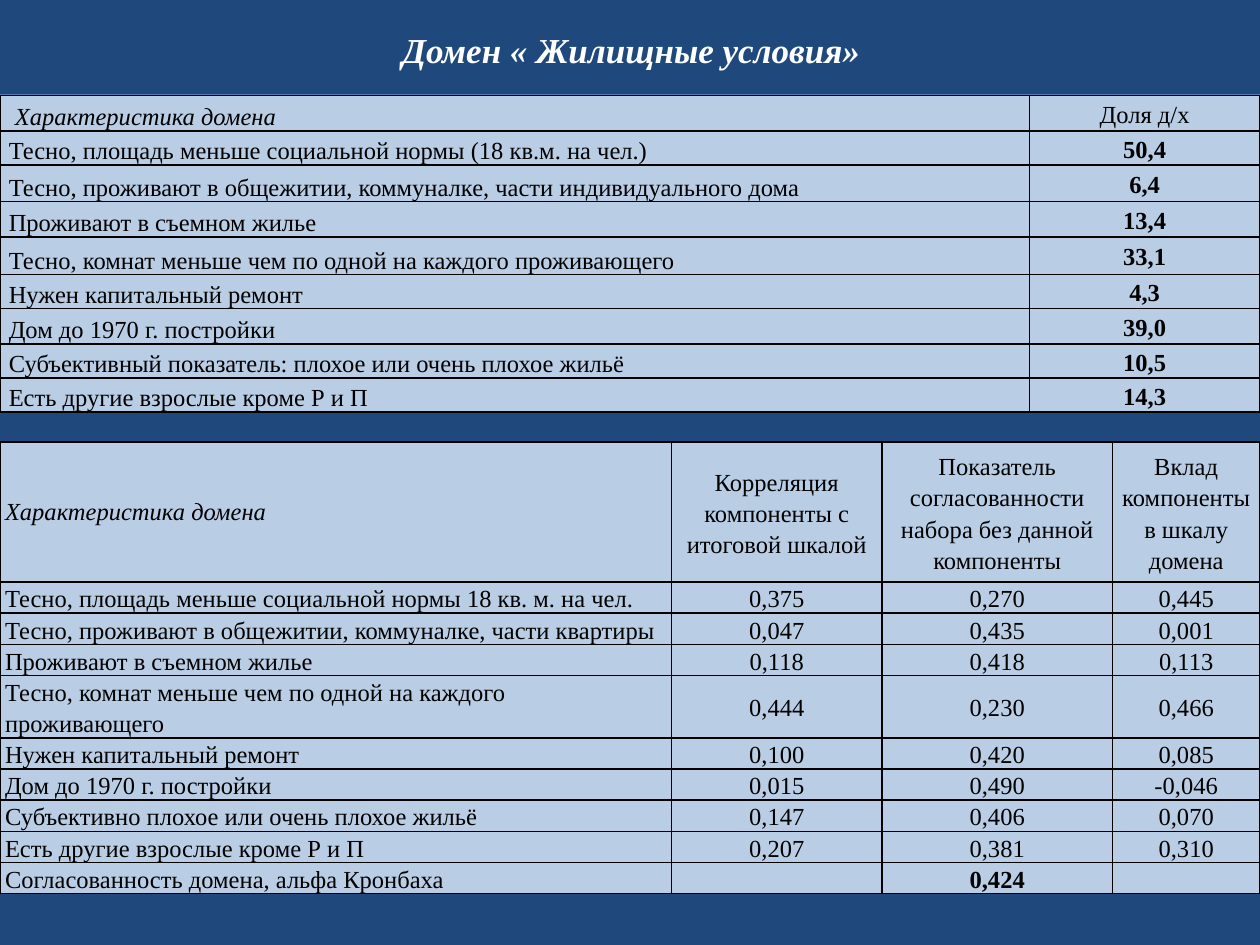
from lxml.etree import SubElement, fromstring
from pptx import Presentation
from pptx.dml.color import RGBColor
from pptx.enum.shapes import MSO_CONNECTOR
from pptx.enum.text import MSO_ANCHOR, PP_ALIGN
from pptx.oxml.ns import nsdecls, qn
from pptx.util import Inches, Pt

COLORS = {"back": "1F497D", "title": "FFFFFF", "rule": "4B7EBC",
          "cell": "B9CDE5", "text": "000000", "border": "000000"}

SHARES = [
    ("\u00a0Характеристика домена".replace("\u00a0", " "), "Доля д/х"),
    ("Тесно, площадь меньше социальной нормы (18 кв.м. на чел.)", "50,4"),
    ("Тесно, проживают в общежитии, коммуналке, части индивидуального дома", "6,4"),
    ("Проживают в съемном жилье", "13,4"),
    ("Тесно, комнат меньше чем по одной на каждого проживающего", "33,1"),
    ("Нужен капитальный ремонт", "4,3"),
    ("Дом до 1970 г. постройки", "39,0"),
    ("Субъективный показатель: плохое или очень плохое жильё", "10,5"),
    ("Есть другие взрослые кроме Р и П", "14,3"),
]
SCALE = [
    ("Характеристика домена", "Корреляция компоненты с итоговой шкалой",
     "Показатель согласованности набора без данной компоненты",
     "Вклад компоненты в шкалу домена"),
    ("Тесно, площадь меньше социальной нормы 18 кв. м. на чел.", "0,375", "0,270", "0,445"),
    ("Тесно, проживают в общежитии, коммуналке, части квартиры", "0,047", "0,435", "0,001"),
    ("Проживают в съемном жилье", "0,118", "0,418", "0,113"),
    ("Тесно, комнат меньше чем по одной на каждого проживающего", "0,444", "0,230", "0,466"),
    ("Нужен капитальный ремонт", "0,100", "0,420", "0,085"),
    ("Дом до 1970 г. постройки", "0,015", "0,490", "-0,046"),
    ("Субъективно плохое или очень плохое жильё", "0,147", "0,406", "0,070"),
    ("Есть другие взрослые кроме Р и П", "0,207", "0,381", "0,310"),
    ("Согласованность домена, альфа Кронбаха", "", "0,424", ""),
]


class DomainSlide:
    """Slide builder on a grid of 100 columns by 75 rows."""

    font = "Times New Roman"
    text_size = 14

    def __init__(self, deck):
        self.col = deck.slide_width / 100
        self.row = deck.slide_height / 75
        self.slide = deck.slides.add_slide(deck.slide_layouts[5])
        self.paint(self.slide.background.fill, "back")

    def paint(self, fill, color):
        fill.solid()
        fill.fore_color.rgb = RGBColor.from_string(COLORS[color])

    def box(self, left, top, width, height):
        return (round(left * self.col), round(top * self.row),
                round(width * self.col), round(height * self.row))

    def format_runs(self, paragraph, size, color, bold=False, italic=False):
        for run in paragraph.runs:
            font = run.font
            font.name, font.size = self.font, Pt(size)
            font.bold, font.italic = bold, italic
            font.color.rgb = RGBColor.from_string(COLORS[color])

    def title(self, text, *place):
        heading = self.slide.shapes.title
        heading.left, heading.top, heading.width, heading.height = self.box(*place)
        heading.text_frame.text = text
        heading.text_frame.vertical_anchor = MSO_ANCHOR.MIDDLE
        paragraph = heading.text_frame.paragraphs[0]
        paragraph.alignment = PP_ALIGN.CENTER
        self.format_runs(paragraph, 20, "title", bold=True, italic=True)

    def rule(self, top):
        left, y, width, _ = self.box(0, top, 100, 0)
        divider = self.slide.shapes.add_connector(
            MSO_CONNECTOR.STRAIGHT, left, y, left + width, y)
        divider.line.color.rgb = RGBColor.from_string(COLORS["rule"])
        divider.line.width = Pt(2.5)
        SubElement(divider._element.spPr, qn("a:effectLst"))

    def cell(self, cell, text, anchor, align, inset, after, bold, italic, spacing):
        cell.margin_left = cell.margin_right = Inches(inset)
        cell.margin_top = cell.margin_bottom = 0
        cell.vertical_anchor = anchor
        self.paint(cell.fill, "cell")
        self.borders(cell)
        cell.text_frame.text = text
        paragraph = cell.text_frame.paragraphs[0]
        paragraph.alignment = align
        paragraph.line_spacing = spacing
        paragraph.space_after = Pt(after)
        if text:
            self.format_runs(paragraph, self.text_size, "text", bold, italic)
        else:
            SubElement(paragraph._p, qn("a:endParaRPr"), sz=str(self.text_size * 100))

    def borders(self, cell):
        properties = cell._tc.get_or_add_tcPr()
        for index, side in enumerate("LRTB"):
            properties.insert(index, fromstring(
                f'<a:ln{side} {nsdecls("a")} w="{Pt(1)}"><a:solidFill>'
                f'<a:srgbClr val="{COLORS["border"]}"/></a:solidFill></a:ln{side}>'))

    def table(self, records, top, widths, heights, label_anchor, label_align,
              inset, bold_cells, after=0, header_spacing=1.15):
        grid = self.slide.shapes.add_table(
            len(records), len(widths), *self.box(0, top, sum(widths), sum(heights))).table
        for column, width in zip(grid.columns, widths):
            column.width = round(width * self.col)
        for line, height in zip(grid.rows, heights):
            line.height = round(height * self.row)
        for r, record in enumerate(records):
            for c, text in enumerate(record):
                label = c == 0
                corner = label and r == 0
                self.cell(grid.cell(r, c), text,
                          label_anchor if label else MSO_ANCHOR.MIDDLE,
                          label_align if label else PP_ALIGN.CENTER,
                          inset, after, (r, c) in bold_cells, corner,
                          header_spacing if corner else 1.15)


def main():
    deck = Presentation()
    deck.slide_width, deck.slide_height = Inches(10), Inches(7.5)
    page = DomainSlide(deck)
    page.title("Домен « Жилищные условия»", 5.1, -1.9, 90, 11.7)
    page.rule(7.6)
    page.table(SHARES, 7.6, [81.7, 18.3],
               [2.8, 2.7, 2.9, 2.8, 3, 2.7, 2.8, 2.7, 2.7],
               MSO_ANCHOR.BOTTOM, PP_ALIGN.JUSTIFY, 0.07,
               {(r, 1) for r in range(1, len(SHARES))}, after=10)
    page.table(SCALE, 35.1, [53.3, 16.7, 18.3, 11.7],
               [11.1] + [1.7] * (len(SCALE) - 1),
               MSO_ANCHOR.MIDDLE, PP_ALIGN.LEFT, 0.04,
               {(len(SCALE) - 1, 2)}, header_spacing=1)
    deck.save("out.pptx")


if __name__ == "__main__":
    main()
